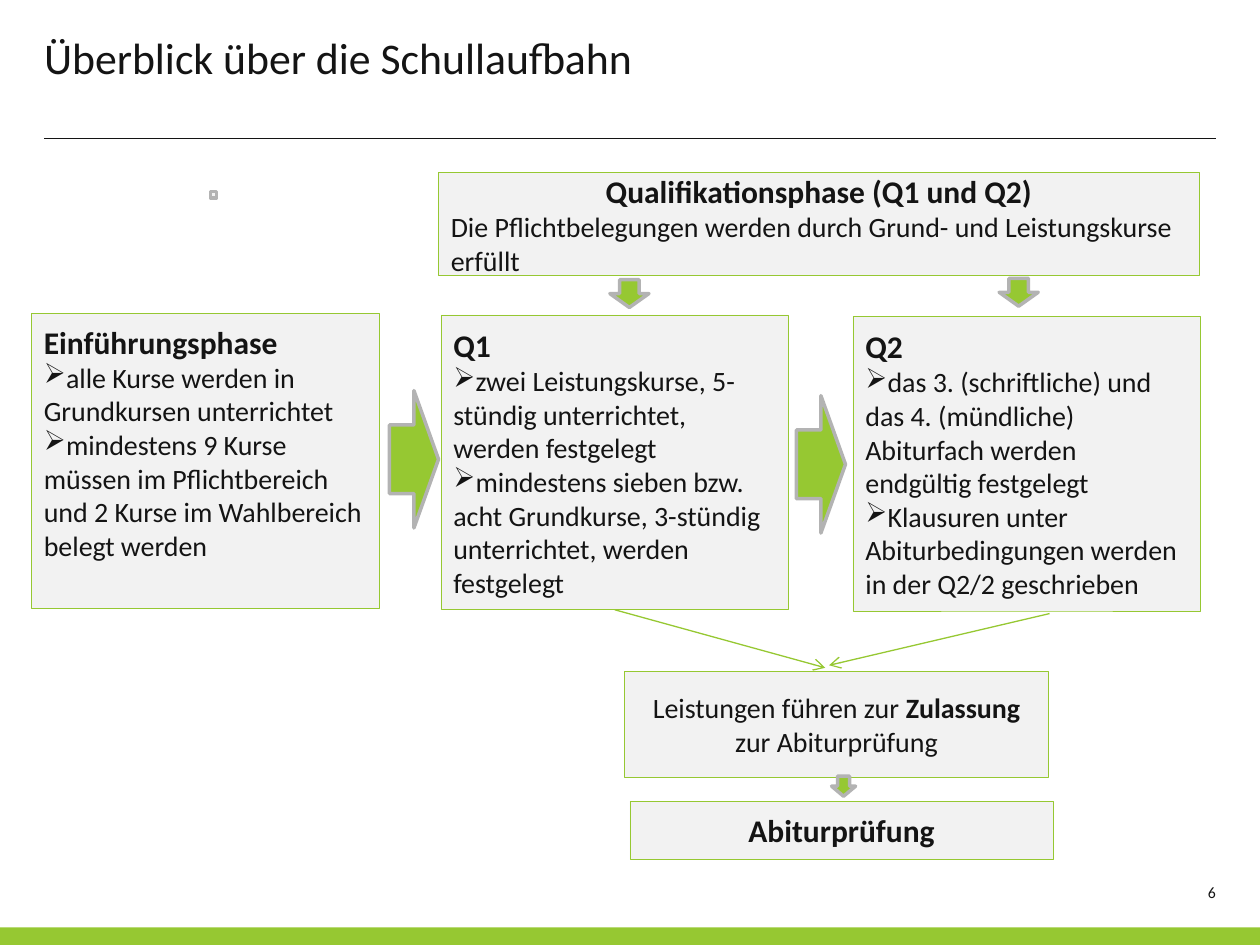
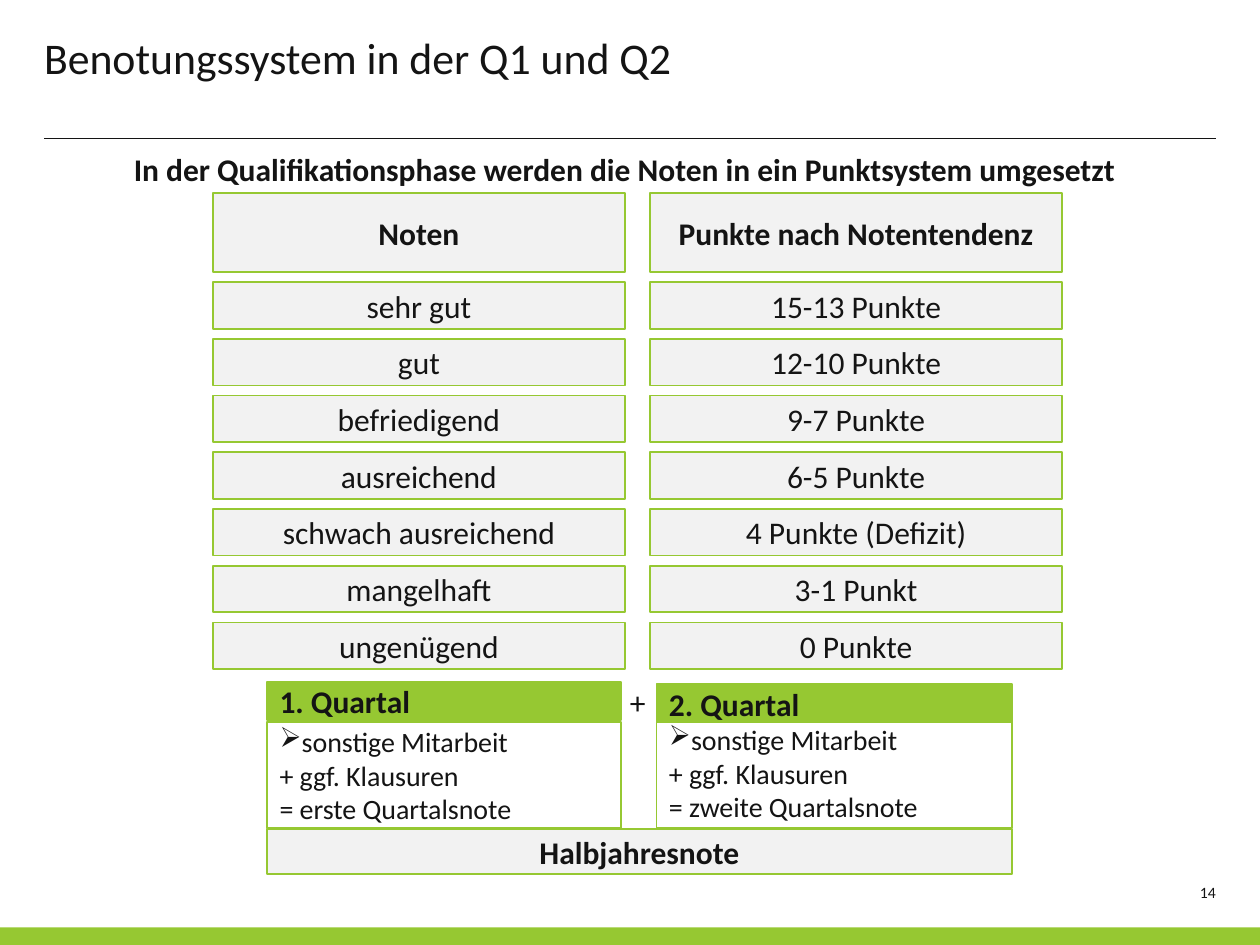
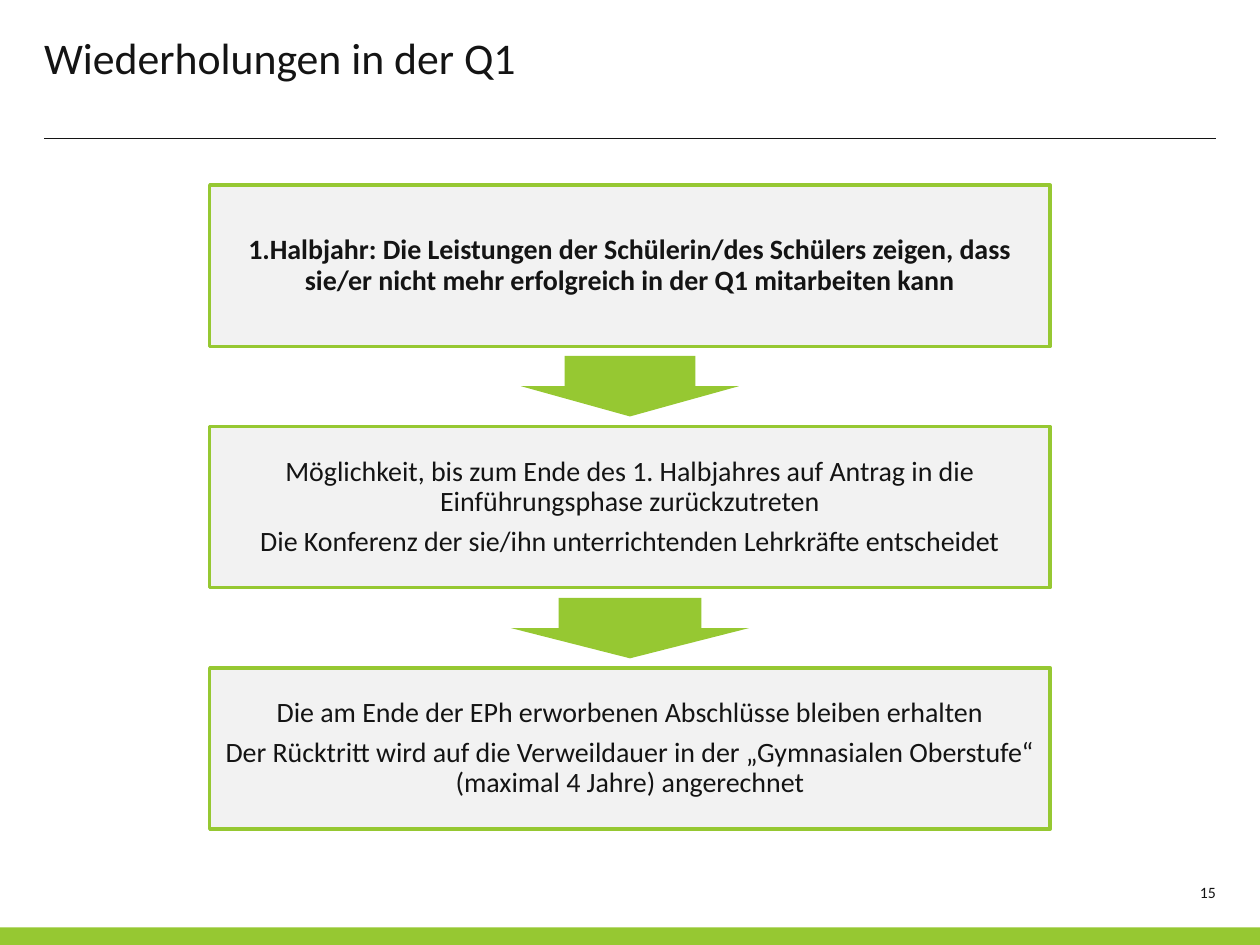
from lxml import etree
from pptx import Presentation
from pptx import util as u
from pptx.dml.color import RGBColor
from pptx.enum import shapes, text
from pptx.oxml.ns import qn

COLORS = {"ink": "141414", "green": "96C832", "panel": "F2F2F2", "gray": "B3B3B3", "white": "FFFFFF"}
FONT = "Calibri"
RECT = shapes.MSO_SHAPE.RECTANGLE
DOWN = shapes.MSO_SHAPE.DOWN_ARROW
RIGHT = shapes.MSO_SHAPE.RIGHT_ARROW
LEFT, CENTER, FLUSH_RIGHT = text.PP_ALIGN.LEFT, text.PP_ALIGN.CENTER, text.PP_ALIGN.RIGHT
TOP, MIDDLE = text.MSO_ANCHOR.TOP, text.MSO_ANCHOR.MIDDLE

deck = Presentation()
deck.slide_width, deck.slide_height = u.Inches(10), u.Inches(7.5)
col, row = deck.slide_width / 100, deck.slide_height / 75


def write(shape, paragraphs, anchor=MIDDLE, insets=(1, 0.5, 1, 0.5), spacing=None):
    """Each paragraph is (wording, size, alignment); asterisks enclose bold, ➢ starts a bullet."""
    frame = shape.text_frame
    left, top, right, bottom = insets
    frame_format = {
        "word_wrap": True, "auto_size": text.MSO_AUTO_SIZE.NONE, "vertical_anchor": anchor,
        "margin_left": int(left * col), "margin_right": int(right * col),
        "margin_top": int(top * row), "margin_bottom": int(bottom * row),
    }
    for key, value in frame_format.items():
        setattr(frame, key, value)
    for index, (wording, size, alignment) in enumerate(paragraphs):
        paragraph = frame.add_paragraph() if index else frame.paragraphs[0]
        if wording.startswith("➢"):
            properties = paragraph._p.get_or_add_pPr()
            properties.set("marL", "0")
            properties.set("indent", "0")
            etree.SubElement(properties, qn("a:buChar")).set("char", "➢")
        for key, value in {"alignment": alignment, **(spacing or {})}.items():
            setattr(paragraph, key, value)
        for part, words in enumerate(wording.lstrip("➢").split("*")):
            if words:
                run = paragraph.add_run()
                run.text = words
                for key, value in {"name": FONT, "size": u.Pt(size), "bold": part % 2 == 1}.items():
                    setattr(run.font, key, value)
                run.font.color.rgb = RGBColor.from_string(COLORS["ink"])


def draw(slide, kind, place, fill=None, line=None, weight=0.5):
    """Places are in grid columns and rows: left, top, width, height, or two ends for a connector."""
    spots = [int(value * unit) for value, unit in zip(place, (col, row, col, row))]
    if kind == "link":
        shape = slide.shapes.add_connector(shapes.MSO_CONNECTOR.STRAIGHT, *spots)
        etree.SubElement(shape.element.spPr, qn("a:effectLst"))
    elif kind == "label":
        return slide.shapes.add_textbox(*spots)
    else:
        shape = slide.shapes.add_shape(kind, *spots)
        shape.shadow.inherit = False
        shape.fill.solid()
        shape.fill.fore_color.rgb = RGBColor.from_string(COLORS[fill])
    if line:
        shape.line.color.rgb = RGBColor.from_string(COLORS[line])
        shape.line.width = u.Pt(weight)
    else:
        shape.line.fill.background()
    return shape


layout = deck.slide_layouts[5]
pages = []
for heading, number in [("Überblick über die Schullaufbahn", 6),
                        ("Benotungssystem in der Q1 und Q2", 14),
                        ("Wiederholungen in der Q1", 15)]:
    page = deck.slides.add_slide(layout)
    title = page.shapes.title
    title_place = {"left": 3.5 * col, "top": 2.4 * row, "width": 74.4 * col, "height": 8.7 * row}
    for key, value in title_place.items():
        setattr(title, key, int(value))
    write(title, [(heading, 25, LEFT)], TOP, (0, 0, 0, 0))
    page_number = draw(page, "label", (93.7, 70.1, 2.8, 2))
    write(page_number, [(str(number), 9, FLUSH_RIGHT)], TOP, (0, 0, 0, 0))
    pages.append(page)
career, grading, repeating = pages

title_rule = draw(career, "link", (3.5, 11, 96.5, 11), line="ink", weight=0.75)
bottom_band = draw(career, RECT, (0, 73.6, 100, 1.4), "green")
for shared in (title_rule, bottom_band):
    layout.shapes.element.append(shared.element)

phases = [
    ((2.5, 24.9, 27.6, 23.4), (1, 0.5, 1, 3.5), [
        ("*Einführungsphase*", 18, LEFT),
        ("➢alle Kurse werden in Grundkursen unterrichtet", 16, LEFT),
        ("➢mindestens 9 Kurse müssen im Pflichtbereich und 2 Kurse im Wahlbereich belegt werden", 16, LEFT)]),
    ((35, 25, 27.6, 23.4), (1, 0.5, 1, 0.5), [
        ("*Q1*", 18, LEFT),
        ("➢zwei Leistungskurse, 5-stündig unterrichtet, werden festgelegt", 16, LEFT),
        ("➢mindestens sieben bzw. acht Grundkurse, 3-stündig unterrichtet, werden festgelegt", 16, LEFT)]),
    ((67.7, 25.1, 27.6, 23.4), (1, 0.5, 1, 0.5), [
        ("*Q2*", 18, LEFT),
        ("➢das 3. (schriftliche) und das 4. (mündliche) Abiturfach werden endgültig festgelegt", 16, LEFT),
        ("➢Klausuren unter Abiturbedingungen werden in der Q2/2 geschrieben", 16, LEFT)]),
    ((34.8, 13.7, 60.4, 8.2), (1, 0.5, 1, 0.5), [
        ("*Qualifikationsphase (Q1 und Q2)*", 18, CENTER),
        ("Die Pflichtbelegungen werden durch Grund- und Leistungskurse erfüllt", 16, LEFT)]),
    ((49.6, 53.3, 33.6, 8.4), (1, 0.5, 1, 0.5), [
        ("Leistungen führen zur *Zulassung* zur Abiturprüfung", 16, CENTER)]),
    ((50, 63.6, 33.6, 4.6), (1, 0.5, 1, 0.5), [("*Abiturprüfung*", 18, CENTER)]),
]
for place, insets, wording in phases:
    write(draw(career, RECT, place, "panel", "green"), wording, insets=insets)

draw(career, RECT, (16.7, 15.2, 0.5, 0.5), "panel", "gray", 2)
for direction, place in [(RIGHT, (30.9, 31, 3.9, 10.9)), (RIGHT, (63.2, 31.4, 3.9, 10.9)),
                         (DOWN, (48.4, 22.2, 3.1, 2.2)), (DOWN, (79.3, 22.1, 3.1, 2.2)),
                         (DOWN, (66, 61.6, 1.9, 1.6))]:
    draw(career, direction, place, "green", "gray", 2)

for ends in [(48.8, 48.4, 65.5, 53), (83.3, 48.7, 65.8, 52.8)]:
    admission_link = draw(career, "link", ends, line="green", weight=0.75)
    etree.SubElement(admission_link.line._get_or_add_ln(), qn("a:tailEnd")).set("type", "arrow")

half_year = draw(grading, RECT, (21.2, 65.8, 59.1, 3.6), "panel", "green", 1)
write(half_year, [("*Halbjahresnote*", 18, CENTER)])

for name, result, left, width, head_top, body_top in [
        ("1. Quartal", "erste", 21.2, 28.1, 54.1, 57.3),
        ("2. Quartal", "zweite", 52.1, 28.2, 54.3, 57)]:
    body = draw(grading, RECT, (left, body_top, width, 65.7 - body_top), "white", "green", 1)
    write(body, [("➢sonstige Mitarbeit", 16, LEFT), ("+ ggf. Klausuren", 16, LEFT),
                 (f"= {result} Quartalsnote", 16, LEFT)])
    quarter_head = draw(grading, RECT, (left, head_top, width, 3.05), "green", "green", 1)
    write(quarter_head, [(f"*{name}*", 18, LEFT)])
write(draw(grading, "label", (49, 53.7, 2.1, 4)), [("+", 18, LEFT)], TOP)

intro = draw(grading, "label", (3.1, 11.4, 93, 4))
write(intro, [("*In der Qualifikationsphase werden die Noten in ein Punktsystem umgesetzt*", 18, CENTER)], TOP)

scale = [
    ("*Noten*", "*Punkte nach Notentendenz*"),
    ("sehr gut", "15-13 Punkte"),
    ("gut", "12-10 Punkte"),
    ("befriedigend", "9-7 Punkte"),
    ("ausreichend", "6-5 Punkte"),
    ("schwach ausreichend", "4 Punkte (Defizit)"),
    ("mangelhaft", "3-1 Punkt"),
    ("ungenügend", "0 Punkte"),
]
for level, pair in enumerate(scale):
    top, height = (17.9 + 4.5 * level, 3.7) if level else (15.3, 6.3)
    for side, wording in enumerate(pair):
        grade = draw(grading, RECT, (16.9 + 34.7 * side, top, 32.7, height), "panel", "green", 1)
        write(grade, [(wording, 18, CENTER)])

steps = [
    ["*1.Halbjahr: Die Leistungen der Schülerin/des Schülers zeigen, dass sie/er nicht mehr "
     "erfolgreich in der Q1 mitarbeiten kann*"],
    ["Möglichkeit, bis zum Ende des 1. Halbjahres auf Antrag in die Einführungsphase zurückzutreten",
     "Die Konferenz der sie/ihn unterrichtenden Lehrkräfte entscheidet"],
    ["Die am Ende der EPh erworbenen Abschlüsse bleiben erhalten",
     "Der Rücktritt wird auf die Verweildauer in der „Gymnasialen Oberstufe“ (maximal 4 Jahre) angerechnet"],
]
step_spacing = {"line_spacing": 0.9, "space_after": u.Pt(5.6)}
for index, wording in enumerate(steps):
    step = draw(repeating, RECT, (16.65, 14.7 + 19.15 * index, 66.7, 12.8), "panel", "green", 2)
    write(step, [(line, 16, CENTER) for line in wording], insets=(0.7,) * 4, spacing=step_spacing)
for index, width in enumerate((17.3, 18.9)):
    arrow = draw(repeating, DOWN, (50 - width / 2, 28.25 + 19.2 * index, width, 4.8), "green")
    arrow.adjustments[0], arrow.adjustments[1] = 0.6, 0.5

deck.save("out.pptx")
